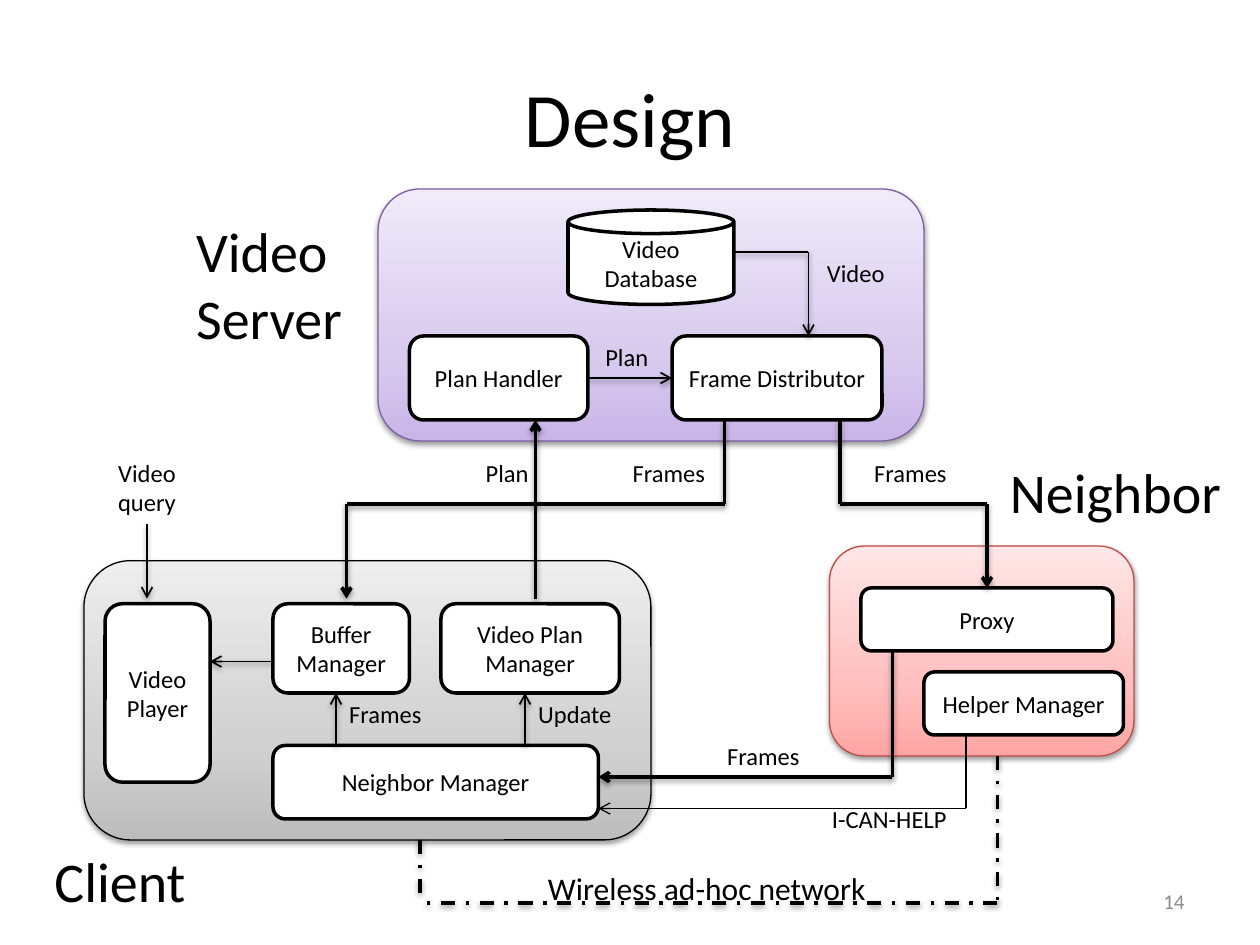
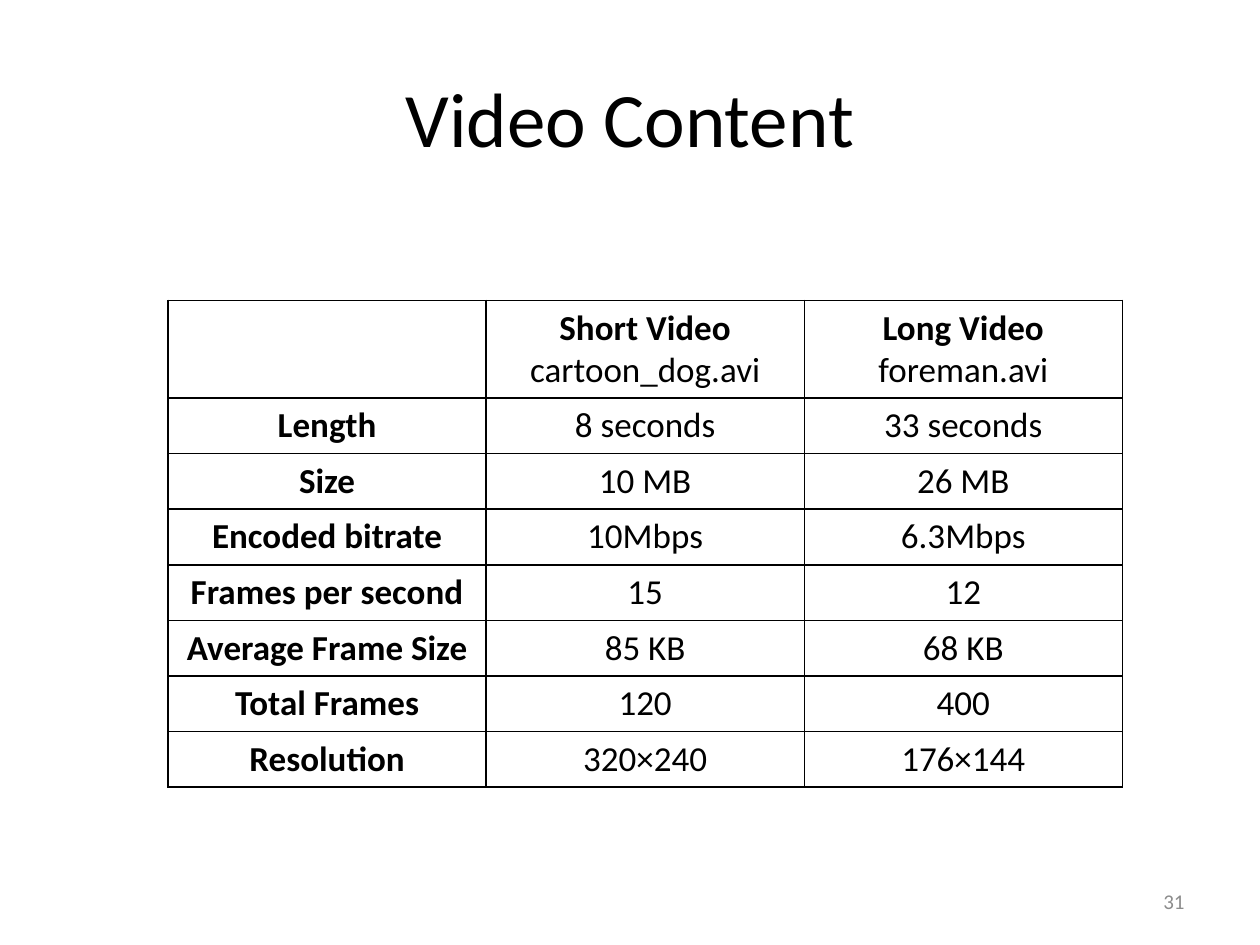
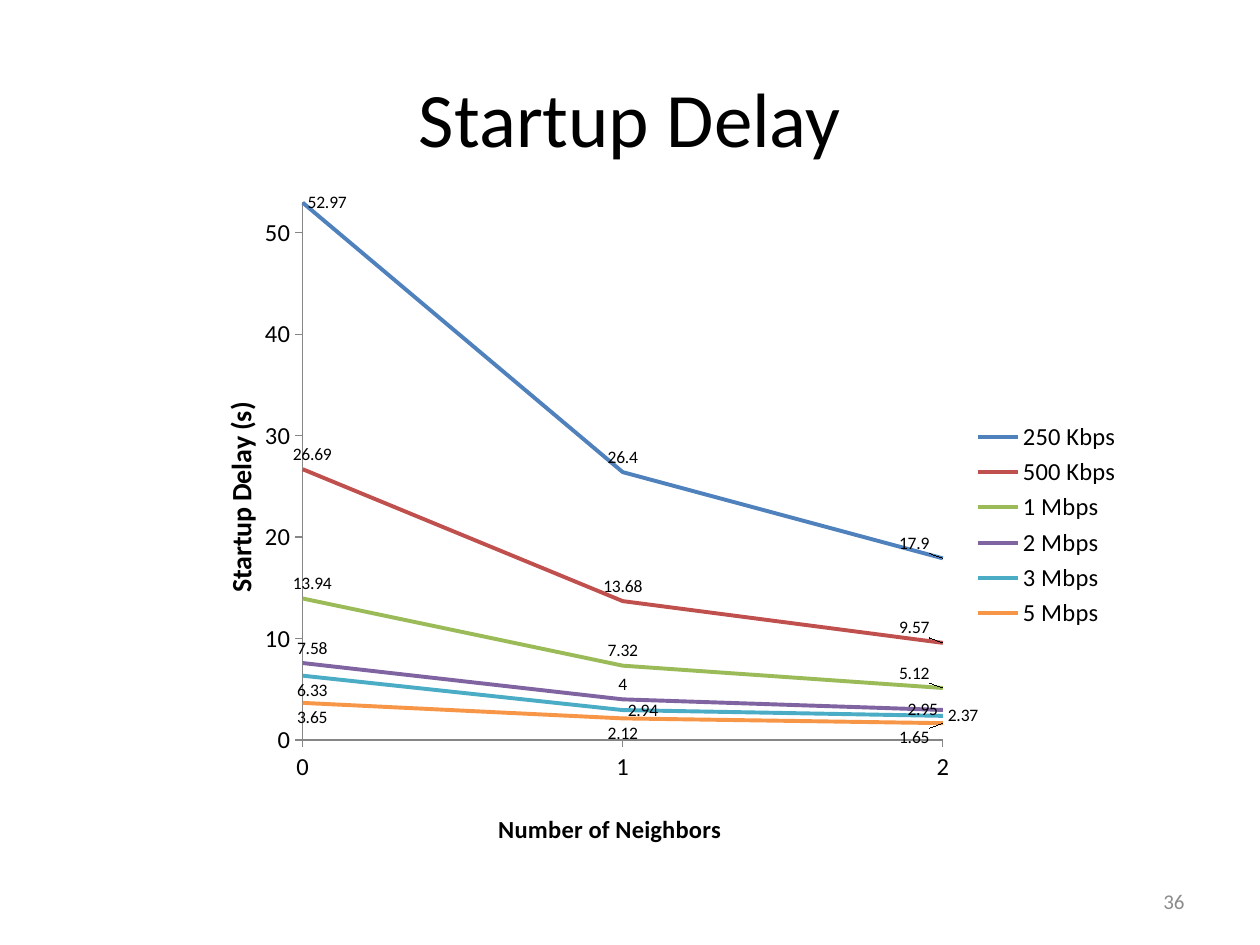
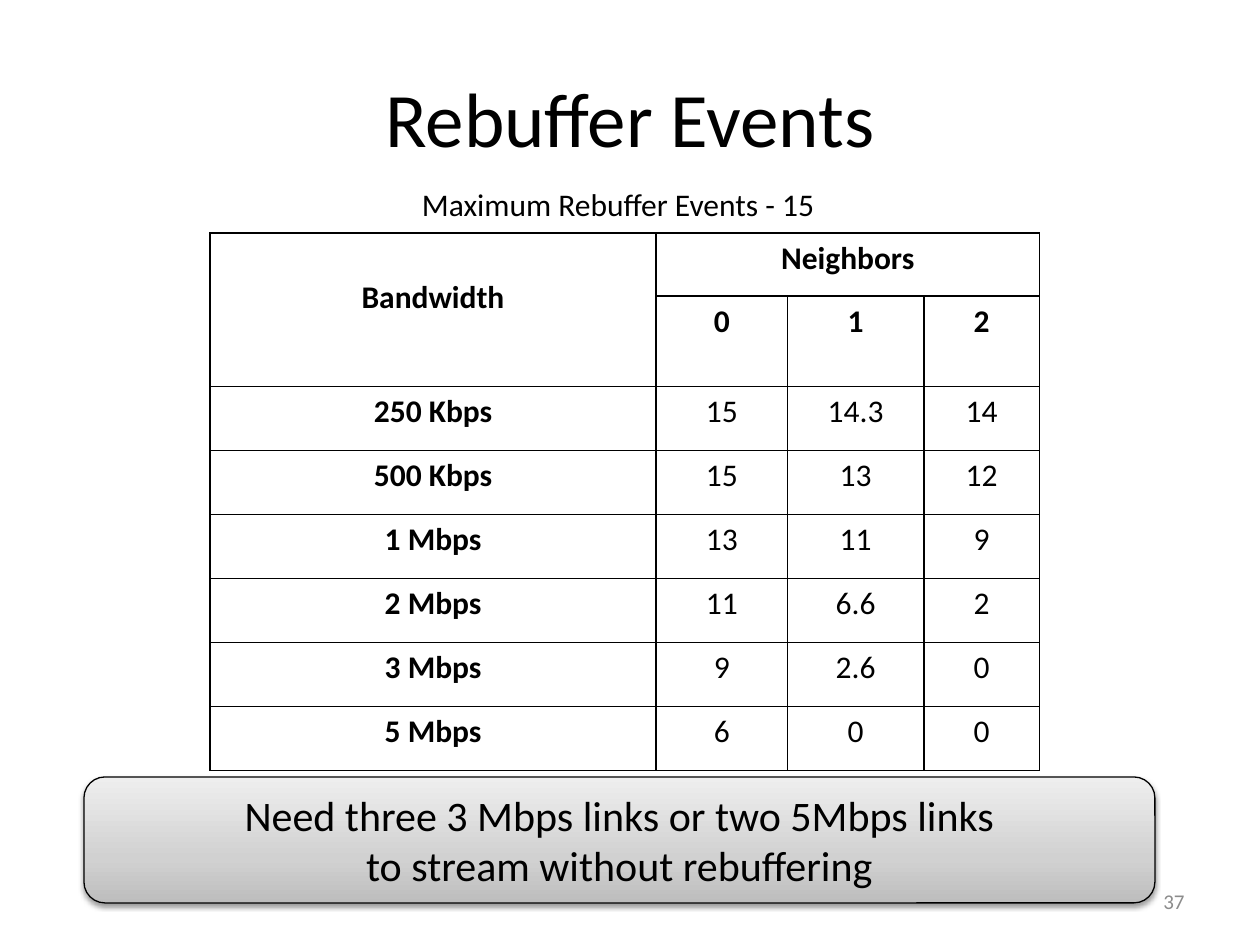
from lxml import etree
from pptx import Presentation
from pptx.chart.data import CategoryChartData
from pptx.dml.color import RGBColor
from pptx.enum.chart import XL_CHART_TYPE, XL_LABEL_POSITION, XL_LEGEND_POSITION, XL_TICK_MARK
from pptx.enum.dml import MSO_LINE
from pptx.enum.shapes import MSO_CONNECTOR, MSO_SHAPE
from pptx.enum.text import MSO_ANCHOR, PP_ALIGN
from pptx.oxml.ns import qn
from pptx.util import Pt

EMU_PER_PX = 7620  # 120 px to the inch

BLACK = RGBColor(0x00, 0x00, 0x00)
WHITE = RGBColor(0xFF, 0xFF, 0xFF)
NUMBER_GREY = RGBColor(0x8C, 0x8C, 0x8C)
AXIS_GREY = RGBColor(0x86, 0x86, 0x86)
PURPLE = RGBColor(0x7D, 0x60, 0xA0)
RED = RGBColor(0xBF, 0x4C, 0x48)
SERIES_COLORS = [
    RGBColor(0x4F, 0x81, 0xBD), RGBColor(0xC0, 0x50, 0x4D), RGBColor(0x9B, 0xBB, 0x59),
    RGBColor(0x80, 0x64, 0xA2), RGBColor(0x4B, 0xAC, 0xC6), RGBColor(0xF7, 0x96, 0x46),
]
# Gradient stops at 0, 35 and 100 percent, from bottom to top
STOPS = (0, 35, 100)
PURPLE_GRADIENT = (RGBColor(0xC9, 0xB5, 0xE8), RGBColor(0xD8, 0xCB, 0xEE), RGBColor(0xF0, 0xEA, 0xF9))
GREY_GRADIENT = (RGBColor(0xBD, 0xBD, 0xBD), RGBColor(0xD1, 0xD1, 0xD1), RGBColor(0xEE, 0xEE, 0xEE))
RED_GRADIENT = (RGBColor(0xFF, 0xA6, 0xA5), RGBColor(0xFF, 0xC0, 0xBF), RGBColor(0xFF, 0xE7, 0xE7))

ROUND, CAN = MSO_SHAPE.ROUNDED_RECTANGLE, MSO_SHAPE.CAN
STRAIGHT = MSO_CONNECTOR.STRAIGHT
DASH_DOT = MSO_LINE.DASH_DOT
LEFT, CENTER, RIGHT = PP_ALIGN.LEFT, PP_ALIGN.CENTER, PP_ALIGN.RIGHT
TOP, MIDDLE = MSO_ANCHOR.TOP, MSO_ANCHOR.MIDDLE
TOP_SIDE, LEFT_SIDE, BOTTOM_SIDE, RIGHT_SIDE = range(4)
LABEL_POSITIONS = {
    "above": XL_LABEL_POSITION.ABOVE, "below": XL_LABEL_POSITION.BELOW,
    "left": XL_LABEL_POSITION.LEFT, "right": XL_LABEL_POSITION.RIGHT,
}


def px(n):
    return n * EMU_PER_PX


def set_layout(parent, **parts):
    """Give a chart element a manual layout, in fractions of the chart."""
    for old in parent.findall(qn("c:layout")):
        parent.remove(old)
    layout = etree.Element(qn("c:layout"))
    manual = etree.SubElement(layout, qn("c:manualLayout"))
    for tag, value in parts.items():
        etree.SubElement(manual, qn("c:" + tag), val=str(value))
    before = parent.find(qn("c:tx"))
    if before is None:
        before = parent.find(qn("c:idx"))
    if before is None:
        parent.insert(0, layout)
    else:
        before.addnext(layout)


class Deck:
    font = "Calibri"

    def __init__(self):
        self.prs = Presentation()
        self.prs.slide_width, self.prs.slide_height = px(1200), px(900)
        self.s = None

    def slide(self, title, number):
        self.s = self.prs.slides.add_slide(self.prs.slide_layouts[6])
        self.text(60, 36, 1080, 150, title, 44, anchor=MIDDLE, wrap=True)
        self.text(860, 834, 280, 48, number, 12, RIGHT, NUMBER_GREY, MIDDLE, True)

    def add_lines(self, tf, text, size, align=CENTER, color=BLACK, bold=None):
        """One paragraph per line; bold may be a flag or a flag per line."""
        for i, line in enumerate(text.split("\n")):
            p = tf.paragraphs[0] if i == 0 else tf.add_paragraph()
            p.alignment = align
            r = p.add_run()
            r.text = line
            r.font.name, r.font.size = self.font, Pt(size)
            r.font.bold = bold[i] if isinstance(bold, tuple) else bold
            r.font.color.rgb = color

    def text(self, x, y, w, h, text, size=14, align=CENTER, color=BLACK, anchor=TOP, wrap=False):
        sp = self.s.shapes.add_textbox(px(x), px(y), px(w), px(h))
        sp.text_frame.word_wrap = wrap
        sp.text_frame.vertical_anchor = anchor
        self.add_lines(sp.text_frame, text, size, align, color)
        return sp

    def effects(self, sp, shadow):
        """Set the effect list, empty when there is no shadow."""
        effects = etree.SubElement(sp.element.spPr, qn("a:effectLst"))
        if shadow:
            outer = etree.SubElement(effects, qn("a:outerShdw"), blurRad=str(Pt(3.1)),
                                     dist=str(Pt(1.6)), dir="5400000", rotWithShape="0")
            color = etree.SubElement(outer, qn("a:srgbClr"), val=str(BLACK))
            etree.SubElement(color, qn("a:alpha"), val="38000")

    def box(self, x, y, w, h, text, kind=ROUND):
        sp = self.s.shapes.add_shape(kind, px(x), px(y), px(w), px(h))
        sp.fill.solid()
        sp.fill.fore_color.rgb = WHITE
        sp.line.color.rgb, sp.line.width = BLACK, Pt(2)
        self.effects(sp, False)
        self.add_lines(sp.text_frame, text, 14)
        return sp

    def panel(self, x, y, w, h, gradient, line=BLACK, text=None):
        sp = self.s.shapes.add_shape(ROUND, px(x), px(y), px(w), px(h))
        sp.fill.gradient()
        fill = sp.element.spPr.find(qn("a:gradFill"))
        stops = fill.find(qn("a:gsLst"))
        stops.clear()
        for pos, color in zip(STOPS, gradient):
            stop = etree.SubElement(stops, qn("a:gs"), pos=str(pos * 1000))
            etree.SubElement(stop, qn("a:srgbClr"), val=str(color))
        fill.find(qn("a:lin")).set("ang", "16200000")
        sp.line.color.rgb, sp.line.width = line, Pt(0.75)
        self.effects(sp, True)
        if text:
            self.add_lines(sp.text_frame, text, 24)

    def route(self, *points, width=1, arrow=True, dash=None, shadow=True, begin=None, end=None):
        """Straight segments through the points; begin and end are (shape, side)."""
        last = len(points) - 2
        for i, (a, b) in enumerate(zip(points, points[1:])):
            cx = self.s.shapes.add_connector(STRAIGHT, *(px(n) for n in a + b))
            cx.line.color.rgb, cx.line.width = BLACK, Pt(width)
            if dash:
                cx.line.dash_style = dash
            if arrow and i == last:
                ln = cx.element.spPr.find(qn("a:ln"))
                etree.SubElement(ln, qn("a:tailEnd"), type="arrow")
            self.effects(cx, shadow)
            if begin and i == 0:
                cx.begin_connect(*begin)
            if end and i == last:
                cx.end_connect(*end)

    def table(self, x, y, cols, heights, rows, size, bold):
        """bold(row, column) gives the weight of a cell; None leaves a cell empty."""
        frame = self.s.shapes.add_table(len(heights), len(cols), px(x), px(y),
                                        px(sum(cols)), px(sum(heights)))
        table = frame.table
        table.first_row = table.horz_banding = False
        for col, w in zip(table.columns, cols):
            col.width = px(w)
        for row, h in zip(table.rows, heights):
            row.height = px(h)
        for i, row in enumerate(rows):
            for j, value in enumerate(row):
                cell = table.cell(i, j)
                self.border(cell)
                cell.fill.background()
                if value is not None:
                    self.add_lines(cell.text_frame, value, size, bold=bold(i, j))
        return table

    def border(self, cell):
        tc_pr = cell._tc.get_or_add_tcPr()
        for side in "LRTB":
            ln = etree.SubElement(tc_pr, qn("a:ln" + side), w=str(Pt(1)))
            fill = etree.SubElement(ln, qn("a:solidFill"))
            etree.SubElement(fill, qn("a:srgbClr"), val=str(BLACK))

    def axis(self, axis, title, size):
        axis.has_major_gridlines = False
        axis.major_tick_mark = XL_TICK_MARK.OUTSIDE
        axis.minor_tick_mark = XL_TICK_MARK.NONE
        axis.format.line.color.rgb = AXIS_GREY
        axis.tick_labels.font.size = Pt(14)
        self.add_lines(axis.axis_title.text_frame, title, size, bold=True)

    def line_chart(self, x, y, w, h, cats, series, cat_title, val_title, top, step):
        """series holds (name, values, label positions) for each line."""
        data = CategoryChartData()
        data.categories = cats
        for name, values, _ in series:
            data.add_series(name, values)
        chart = self.s.shapes.add_chart(XL_CHART_TYPE.LINE, px(x), px(y), px(w), px(h), data).chart
        chart.has_title = False
        chart.font.name, chart.font.size = self.font, Pt(10)
        chart.font.color.rgb = BLACK
        chart.has_legend = True
        chart.legend.position = XL_LEGEND_POSITION.RIGHT
        chart.legend.include_in_layout = False
        chart.legend.font.size = Pt(14)
        self.axis(chart.category_axis, cat_title, 14)
        self.axis(chart.value_axis, val_title, 16)
        chart.value_axis.minimum_scale, chart.value_axis.maximum_scale = 0, top
        chart.value_axis.major_unit = step
        plot = chart.plots[0]
        plot.vary_by_categories = False
        for line, color, (_, _, positions) in zip(plot.series, SERIES_COLORS, series):
            line.smooth = False
            line.format.line.color.rgb, line.format.line.width = color, Pt(2.25)
            line.data_labels.show_value = True
            line.data_labels.font.size = Pt(10)
            for i, position in enumerate(positions.split()):
                line.points[i].data_label.position = LABEL_POSITIONS[position]
        self.arrange_chart(chart._chartSpace)

    def arrange_chart(self, space):
        """Start the lines on the value axis and place plot, titles and end labels."""
        for old in space.xpath("//c:valAx/c:crossBetween"):
            old.getparent().remove(old)
        crosses = space.xpath("//c:valAx/c:crosses")[0]
        crosses.addnext(etree.Element(qn("c:crossBetween"), val="midCat"))
        set_layout(space.xpath("//c:plotArea")[0], layoutTarget="inner", xMode="edge",
                   yMode="edge", x=0.13, y=0.02, w=0.67, h=0.8)
        for tag, x, y in (("catAx", 0.33, 0.92), ("valAx", 0.04, 0.31)):
            set_layout(space.xpath(f"//c:{tag}/c:title")[0], xMode="edge", yMode="edge", x=x, y=y)
        body = space.xpath("//c:valAx/c:title//a:bodyPr")[0]
        body.set("rot", "-5400000")
        body.set("vert", "horz")
        for idx, shift in ((0, 0.01), (2, -0.03)):
            for label in space.xpath(f"//c:dLbl[c:idx/@val='{idx}']"):
                if label.find(qn("c:dLblPos")).get("val") in ("t", "b"):
                    set_layout(label, x=shift, y=0)


def design_slide(d):
    d.slide("Design", "14")
    d.panel(360, 180, 520, 240, PURPLE_GRADIENT, PURPLE)
    d.panel(80, 534, 540, 266, GREY_GRADIENT)
    d.panel(790, 520, 290, 200, RED_GRADIENT, RED)

    d.box(541, 200, 158, 90, "Video Database", CAN)
    d.box(260, 710, 310, 70, "Neighbor Manager")
    d.box(880, 640, 190, 60, "Helper Manager")
    proxy = d.box(820, 560, 240, 60, "Proxy")
    d.box(420, 575, 170, 85, "Video Plan Manager")
    d.box(260, 575, 130, 85, "Buffer Manager")
    d.box(100, 575, 100, 170, "Video Player")
    distributor = d.box(640, 320, 200, 80, "Frame Distributor")
    handler = d.box(390, 320, 170, 80, "Plan Handler")
    query = d.text(100, 430, 80, 69, "Video\nquery")

    d.route((560, 360), (640, 360), begin=(handler, RIGHT_SIDE), end=(distributor, LEFT_SIDE))
    d.route((699, 240), (770, 240), (770, 320))
    d.route((800, 400), (800, 480), (940, 480), (940, 560), width=2, end=(proxy, TOP_SIDE))
    d.route((690, 400), (690, 480), (330, 480), (330, 570), width=2)
    d.route((510, 570), (510, 400), width=2)
    d.route((500, 710), (500, 660))
    d.route((320, 710), (320, 660))
    d.route((260, 630), (200, 630))
    d.route((140, 499), (140, 570), begin=(query, BOTTOM_SIDE))
    d.route((850, 620), (850, 740), (570, 740), width=2)
    d.route((920, 700), (920, 770), (570, 770), width=0.75, shadow=False)
    d.route((950, 720), (950, 860), (400, 860), width=2, arrow=False, dash=DASH_DOT)
    d.route((400, 800), (400, 860), width=2, arrow=False, dash=DASH_DOT)

    for x, y in ((320, 660), (590, 430), (820, 430), (680, 700)):
        d.text(x, y, 94, 40, "Frames")
    for x, y in ((564, 320), (450, 430)):
        d.text(x, y, 66, 40, "Plan")
    d.text(500, 660, 95, 40, "Update")
    d.text(780, 760, 134, 40, "I-CAN-HELP")
    d.text(770, 240, 90, 40, "Video")
    d.text(510, 822, 330, 48, "Wireless ad-hoc network", 18, LEFT)
    d.text(175, 200, 164, 142, "Video\nServer", 32, LEFT)
    d.text(950, 430, 228, 77, "Neighbor", 32, LEFT)
    d.text(40, 800, 150, 77, "Client", 32, LEFT)


def content_slide(d):
    d.slide("Video Content", "31")
    rows = [
        (None, "Short Video\ncartoon_dog.avi", "Long Video\nforeman.avi"),
        ("Length", "8 seconds", "33 seconds"),
        ("Size", "10 MB", "26 MB"),
        ("Encoded bitrate", "10Mbps", "6.3Mbps"),
        ("Frames per second", "15", "12"),
        ("Average Frame Size", "85 KB", "68 KB"),
        ("Total Frames", "120", "400"),
        ("Resolution", "320×240", "176×144"),
    ]
    d.table(160, 286, [303] * 3, [93] + [53] * 7, rows, 20,
            lambda i, j: (True, False) if i == 0 else j == 0)


def delay_slide(d):
    d.slide("Startup Delay", "36")
    series = [
        ("250 Kbps", (52.97, 26.4, 17.9), "right above above"),
        ("500 Kbps", (26.69, 13.68, 9.57), "above above above"),
        ("1 Mbps", (13.94, 7.32, 5.12), "above above above"),
        ("2 Mbps", (7.58, 4, 2.95), "above above left"),
        ("3 Mbps", (6.33, 2.94, 2.37), "below right right"),
        ("5 Mbps", (3.65, 2.12, 1.65), "below below below"),
    ]
    d.line_chart(170, 180, 910, 640, ("0", "1", "2"), series,
                 "Number of Neighbors", "Startup Delay (s)", 53, 10)


def rebuffer_slide(d):
    d.slide("Rebuffer Events", "37")
    rows = [
        ("Bandwidth", "Neighbors", None, None),
        (None, "0", "1", "2"),
        ("250 Kbps", "15", "14.3", "14"),
        ("500 Kbps", "15", "13", "12"),
        ("1 Mbps", "13", "11", "9"),
        ("2 Mbps", "11", "6.6", "2"),
        ("3 Mbps", "9", "2.6", "0"),
        ("5 Mbps", "6", "0", "0"),
    ]
    table = d.table(200, 222, [425, 125, 130, 110], [60, 86] + [61] * 6, rows, 18,
                    lambda i, j: i < 2 or j == 0)
    bandwidth = table.cell(0, 0)
    bandwidth.merge(table.cell(1, 0))
    bandwidth.margin_top = px(43)
    table.cell(0, 1).merge(table.cell(0, 3))
    d.text(390, 170, 420, 48, "Maximum Rebuffer Events - 15", 18, LEFT, wrap=True)
    d.panel(80, 740, 1020, 120, GREY_GRADIENT,
            text="Need three 3 Mbps links or two 5Mbps links\nto stream without rebuffering")


def main():
    d = Deck()
    for build in (design_slide, content_slide, delay_slide, rebuffer_slide):
        build(d)
    d.prs.save("out.pptx")


if __name__ == "__main__":
    main()
